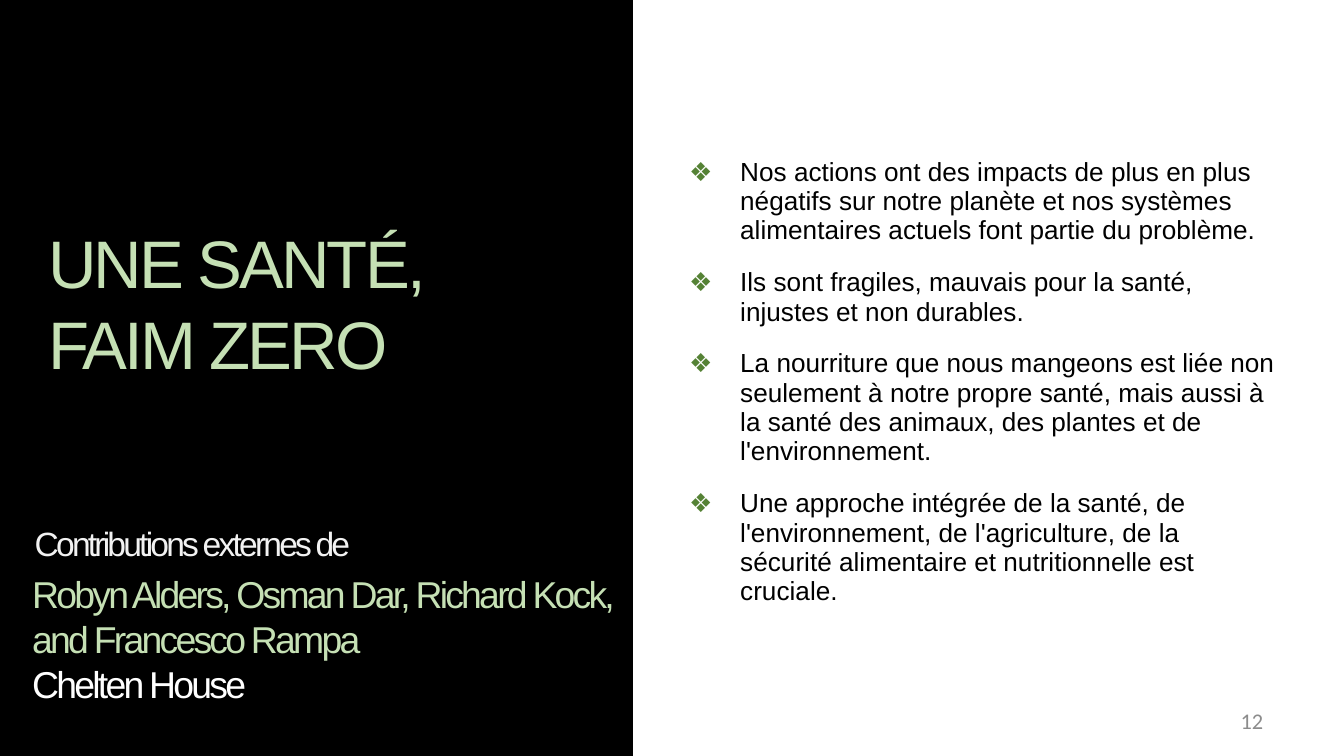
from lxml.etree import SubElement
from pptx import Presentation
from pptx.dml.color import RGBColor
from pptx.enum.shapes import MSO_SHAPE as Shape
from pptx.enum.text import MSO_ANCHOR as Anchor, PP_ALIGN as Align
from pptx.oxml.ns import qn
from pptx.util import Inches, Pt

WIDTH = 10
HEIGHT = WIDTH * 9 / 16
PANEL_SHARE = 0.471
COLORS = {
    "panel": "000000", "white": "FFFFFF", "pale": "F2F2F2", "mint": "C5E0B4",
    "text": "000000", "bullet": "558235", "number": "8C8C8C",
}
POINTS = [
    "Nos actions ont des impacts de plus en plus négatifs sur notre planète et nos "
    "systèmes alimentaires actuels font partie du problème.",
    "Ils sont fragiles, mauvais pour la santé, injustes et non durables.",
    "La nourriture que nous mangeons est liée non seulement à notre propre santé, "
    "mais aussi à la santé des animaux, des plantes et de l'environnement.",
    "Une approche intégrée de la santé, de l'environnement, de l'agriculture, de la "
    "sécurité alimentaire et nutritionnelle est cruciale.",
]


def color(name):
    return RGBColor.from_string(COLORS[name])


def place(box, left, top, width, height):
    """Turn shares of a box (in inches) into a box in inches."""
    x, y, w, h = box
    return x + left * w, y + top * h, width * w, height * h


def lengths(box):
    return [Inches(value) for value in box]


def format_run(run, size, color_name, font="Arial", spacing=0):
    run.font.size = Pt(size)
    run.font.name = font
    run.font.color.rgb = color(color_name)
    if spacing:
        run._r.get_or_add_rPr().set("spc", str(int(spacing * 100)))


def add_text(slide, box, lines, size, font="Arial", spacing=0,
             anchor=Anchor.TOP, align=Align.LEFT):
    """Add a text box; lines holds pairs of text and colour name."""
    text_frame = slide.shapes.add_textbox(*lengths(box)).text_frame
    text_frame.word_wrap = True
    text_frame.vertical_anchor = anchor
    text_frame.text = "\n".join(text for text, _ in lines)
    for paragraph, (_, color_name) in zip(text_frame.paragraphs, lines):
        paragraph.alignment = align
        format_run(paragraph.runs[0], size, color_name, font, spacing)


def add_title_panel(slide, box):
    panel = slide.shapes.add_shape(Shape.RECTANGLE, *lengths(box))
    panel.shadow.inherit = False
    panel.fill.solid()
    panel.fill.fore_color.rgb = color("panel")
    panel.line.fill.background()

    add_text(slide, place(box, 0.055, 0.284, 0.945, 0.235),
             [("UNE SANTÉ,", "mint"), ("FAIM ZERO", "mint")], 36, spacing=-1.5)
    add_text(slide, place(box, 0.034, 0.658, 0.71, 0.12),
             [("Contributions externes de", "pale")],
             18, spacing=-1.5, anchor=Anchor.MIDDLE)
    add_text(slide, place(box, 0.03, 0.747, 1.18, 0.197),
             [("Robyn Alders, Osman Dar, Richard Kock,", "mint"),
              ("and Francesco Rampa", "mint"), ("Chelten House", "white")],
             20, spacing=-1.5)


def add_bullet(paragraph, indent):
    properties = paragraph._p.get_or_add_pPr()
    properties.set("marL", str(Inches(indent)))
    properties.set("indent", str(-Inches(indent)))
    bullet_color = SubElement(properties, qn("a:buClr"))
    SubElement(bullet_color, qn("a:srgbClr")).set("val", COLORS["bullet"])
    SubElement(properties, qn("a:buFont")).set("typeface", "Arial")
    SubElement(properties, qn("a:buChar")).set("char", "❖")


def add_points_table(slide, box):
    table = slide.shapes.add_table(1, 1, *lengths(box)).table
    table.first_row = table.horz_banding = False
    cell = table.cell(0, 0)
    cell.fill.background()
    cell.margin_top = Inches(0.44)
    cell.text_frame.text = "\n".join(POINTS)
    for index, paragraph in enumerate(cell.text_frame.paragraphs):
        add_bullet(paragraph, 0.38)
        paragraph.space_before = Pt(6 if index else 0)
        paragraph.space_after = Pt(6)
        format_run(paragraph.runs[0], 14, "text")


def add_content_side(slide, box):
    add_points_table(slide, place(box, 0.06, 0.13, 0.862, 0.788))
    add_text(slide, place(box, 0.465, 0.927, 0.44, 0.053), [("12", "number")],
             12, font="Calibri", anchor=Anchor.MIDDLE, align=Align.RIGHT)


def main():
    presentation = Presentation()
    presentation.slide_width = Inches(WIDTH)
    presentation.slide_height = Inches(HEIGHT)
    slide = presentation.slides.add_slide(presentation.slide_layouts[6])
    page = (0, 0, WIDTH, HEIGHT)
    add_title_panel(slide, place(page, 0, 0, PANEL_SHARE, 1))
    add_content_side(slide, place(page, PANEL_SHARE, 0, 1 - PANEL_SHARE, 1))
    presentation.save("out.pptx")


if __name__ == "__main__":
    main()
